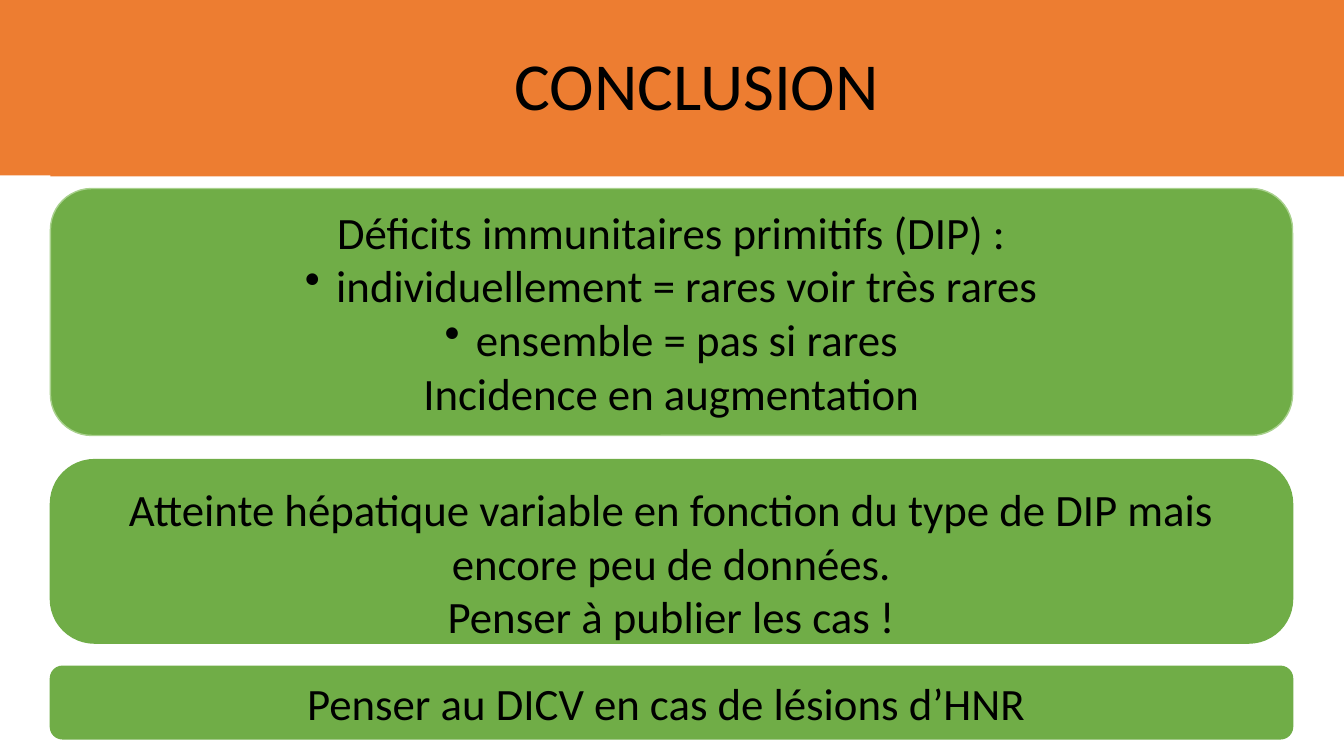
import pptx
import pptx.util
import pptx.dml.color
import pptx.enum.shapes
import pptx.enum.text
import pptx.oxml
import pptx.oxml.ns

Inches = pptx.util.Inches
Pt = pptx.util.Pt
SHAPE = pptx.enum.shapes.MSO_SHAPE
ANCHOR = pptx.enum.text.MSO_ANCHOR
CENTER = pptx.enum.text.PP_ALIGN.CENTER

ORANGE, GREEN, PALE_GREEN, BLACK = "ED7D31", "70AD47", "A9D18E", "000000"
SLIDE_W, SLIDE_H = 13.33, 7.5


def color(hex_string):
    return pptx.dml.color.RGBColor.from_string(hex_string)


def add_panel(slide, kind, box, fill, line=None):
    panel = slide.shapes.add_shape(kind, *map(Inches, box))
    panel.shadow.inherit = False
    panel.fill.solid()
    panel.fill.fore_color.rgb = color(fill)
    if line:
        panel.line.color.rgb = color(line)
        panel.line.width = Pt(1)
    else:
        panel.line.fill.background()
    return panel


def style_paragraph(paragraph, text, size):
    paragraph.text = text
    paragraph.alignment = CENTER
    paragraph.font.name = "Calibri"
    paragraph.font.size = Pt(size)
    paragraph.font.color.rgb = color(BLACK)


def add_bullet(paragraph):
    properties = paragraph._p.get_or_add_pPr()
    properties.set("marL", str(Inches(0.31)))
    properties.set("indent", str(Inches(-0.31)))
    bullet = pptx.oxml.parse_xml(
        f'<a:buChar {pptx.oxml.ns.nsdecls("a")} char="•"/>')
    # The bullet must come before the default run properties
    properties.insert(0, bullet)


def add_header(slide, left, top, width, height):
    # Banner, with a slightly taller layer right of the margin
    add_panel(slide, SHAPE.RECTANGLE, (left, top, width, height), ORANGE)
    add_panel(slide, SHAPE.RECTANGLE,
              (left + 0.5, top, width - 0.5, height + 0.01), ORANGE)
    # Title
    title = add_panel(slide, SHAPE.RECTANGLE,
                      (left + 1.5, top + 0.32, 10.82, 1.13), ORANGE)
    title.text_frame.vertical_anchor = ANCHOR.MIDDLE
    heading = title.text_frame.paragraphs[0]
    style_paragraph(heading, "CONCLUSION", 48)
    heading.line_spacing = 0.9


def add_message(slide, box, lines, line_color=GREEN, bulleted=()):
    message = add_panel(slide, SHAPE.ROUNDED_RECTANGLE, box, GREEN, line_color)
    frame = message.text_frame
    frame.word_wrap = True
    frame.vertical_anchor = ANCHOR.MIDDLE
    for index, text in enumerate(lines):
        paragraph = frame.paragraphs[0] if index == 0 else frame.add_paragraph()
        style_paragraph(paragraph, text, 32)
        if index in bulleted:
            add_bullet(paragraph)
    return message


def add_conclusions(slide, left, top, width):
    # Frequency of the deficiencies
    add_message(slide, (left, top, width, 2.45), [
        "Déficits immunitaires primitifs (DIP) :",
        "individuellement = rares voir très rares",
        "ensemble = pas si rares",
        "Incidence en augmentation",
    ], PALE_GREEN, bulleted=(1, 2))
    # Liver involvement, with its text set low in the box
    liver = add_message(slide, (left, top + 2.69, width, 1.82), [
        "Atteinte hépatique variable en fonction du type de DIP mais "
        "encore peu de données.",
        "Penser à publier les cas !",
    ])
    liver.adjustments[0] = 0.24
    liver.text_frame.vertical_anchor = ANCHOR.TOP
    liver.text_frame.margin_top = Inches(0.09)
    liver.text_frame.margin_bottom = 0
    # Practical reminder
    add_message(slide, (left, top + 4.74, width, 0.72),
                ["Penser au DICV en cas de lésions d’HNR "])


def main():
    presentation = pptx.Presentation()
    presentation.slide_width = Inches(SLIDE_W)
    presentation.slide_height = Inches(SLIDE_H)
    slide = presentation.slides.add_slide(presentation.slide_layouts[6])
    add_header(slide, 0, 0, SLIDE_W, 1.74)
    add_conclusions(slide, 0.5, 1.87, 12.32)
    presentation.save("out.pptx")


if __name__ == "__main__":
    main()
